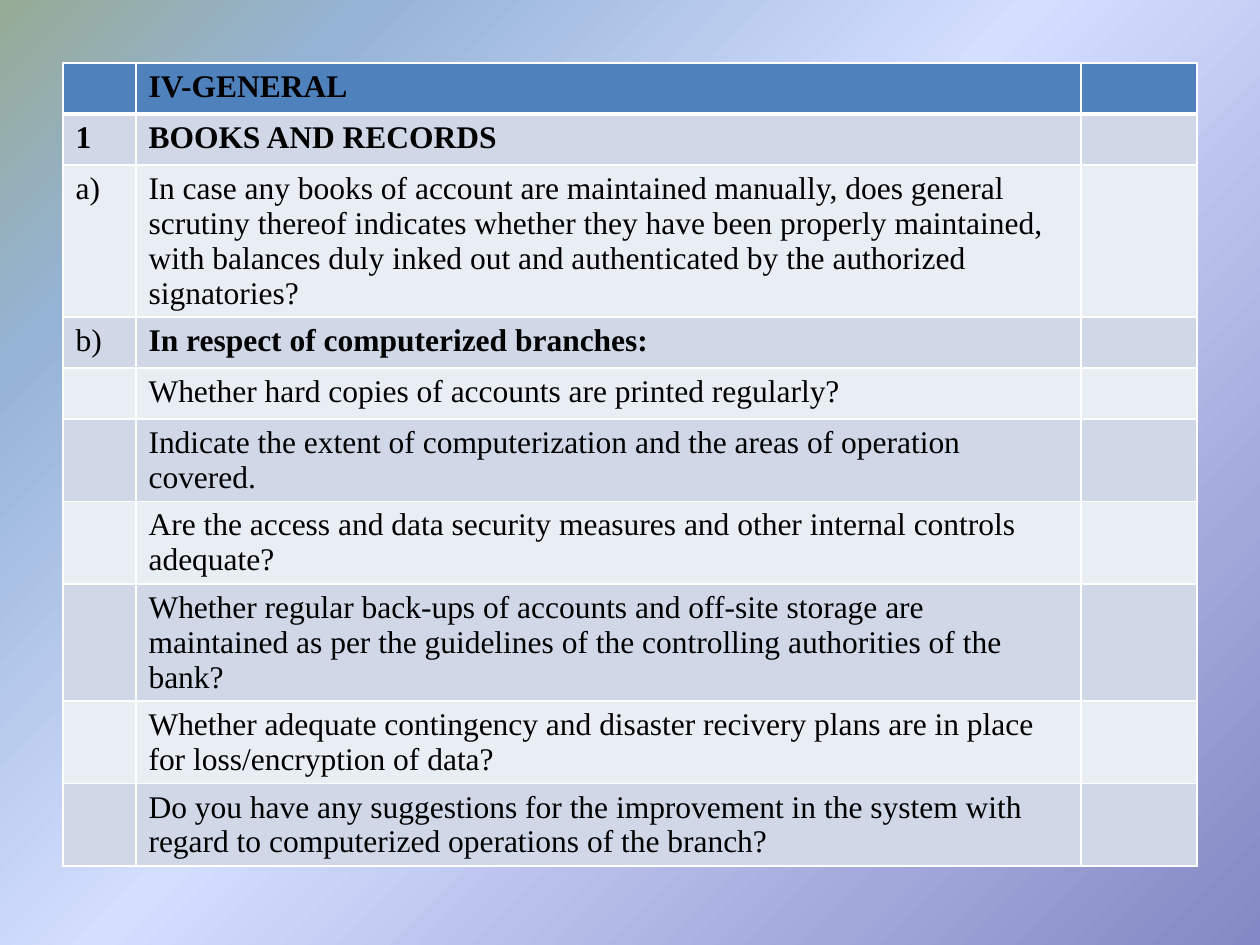
from dataclasses import dataclass

from lxml.etree import SubElement as Sub
from pptx import Presentation as Deck
from pptx.dml.color import RGBColor as Rgb
from pptx.oxml.ns import qn
from pptx.util import Pt


@dataclass(frozen=True)
class Theme:
    font: str = "Times New Roman"
    size: int = 18
    ink: str = "000000"
    head: str = "4F81BD"
    bands: tuple = ("E9EDF4", "D0D8E8")
    rule: str = "FFFFFF"
    thin: int = 1
    thick: int = 3
    back: tuple = ((0, "96AB94"), (17, "95B3D7"), (47, "D4DEFF"), (100, "8488C4"))
    angle: int = 315


ROWS = [
    ("", "IV-GENERAL", True),
    ("1", "BOOKS AND RECORDS", True),
    ("a)", "In case any books of account are maintained manually, does general "
     "scrutiny thereof indicates whether they have been properly maintained, "
     "with balances duly inked out and authenticated by the authorized "
     "signatories?", False),
    ("b)", "In respect of computerized branches:", True),
    ("", "Whether hard copies of accounts are printed regularly?", False),
    ("", "Indicate the extent of computerization and the areas of operation "
     "covered.", False),
    ("", "Are the access and data security measures and other internal controls "
     "adequate?", False),
    ("", "Whether regular back-ups of accounts and off-site storage are "
     "maintained as per the guidelines of the controlling authorities of the "
     "bank?", False),
    ("", "Whether adequate contingency and disaster recivery plans are in place "
     "for loss/encryption of data?", False),
    ("", "Do you have any suggestions for the improvement in the system with "
     "regard to computerized operations of the branch?", False),
]
COLS = (73, 945, 116)
ROW = 51


class Page:
    SCALE = 914400 / 126

    def __init__(self, theme):
        self.theme = theme
        self.deck = Deck()
        self.deck.slide_width = self.emu(1260)
        self.deck.slide_height = self.emu(945)
        self.slide = self.deck.slides.add_slide(self.deck.slide_layouts[6])

    def emu(self, px):
        return round(px * self.SCALE)

    def back(self):
        fill = self.slide.background.fill
        fill.gradient()
        fill.gradient_angle = self.theme.angle
        stops = fill.gradient_stops[0]._gs.getparent()
        for stop in list(stops):
            stops.remove(stop)
        for pos, color in self.theme.back:
            stop = Sub(stops, qn("a:gs"), pos=str(pos * 1000))
            Sub(stop, qn("a:srgbClr"), val=color)

    def border(self, cell, side, width):
        props = cell._tc.get_or_add_tcPr()
        line = Sub(props, qn(f"a:ln{side}"), w=str(Pt(width)))
        Sub(Sub(line, qn("a:solidFill")), qn("a:srgbClr"), val=self.theme.rule)

    def cell(self, cell, text, bold, color, base):
        for side in "LRT":
            self.border(cell, side, self.theme.thin)
        self.border(cell, "B", base)
        cell.fill.solid()
        cell.fill.fore_color.rgb = Rgb.from_string(color)
        cell.text = text
        font = cell.text_frame.paragraphs[0].font
        font.name = self.theme.font
        font.size = Pt(self.theme.size)
        font.bold = bold
        font.color.rgb = Rgb.from_string(self.theme.ink)

    def table(self, x, y, high, cols, rows):
        look = self.theme
        frame = self.slide.shapes.add_table(
            len(rows), len(cols), self.emu(x), self.emu(y),
            self.emu(sum(cols)), self.emu(high))
        grid = frame.table
        for col, wide in zip(grid.columns, cols):
            col.width = self.emu(wide)
        for i, (mark, text, bold) in enumerate(rows):
            grid.rows[i].height = self.emu(ROW)
            color = look.bands[i % 2] if i else look.head
            base = look.thin if i else look.thick
            strong = bold and mark != "b)"
            for j, (word, heavy) in enumerate(
                    ((mark, strong), (text, bold), ("", False))):
                self.cell(grid.cell(i, j), word, heavy, color, base)
        frame.height = self.emu(high)


def main():
    page = Page(Theme())
    page.back()
    page.table(63, 63, 847, COLS, ROWS)
    page.deck.save("out.pptx")


if __name__ == "__main__":
    main()
